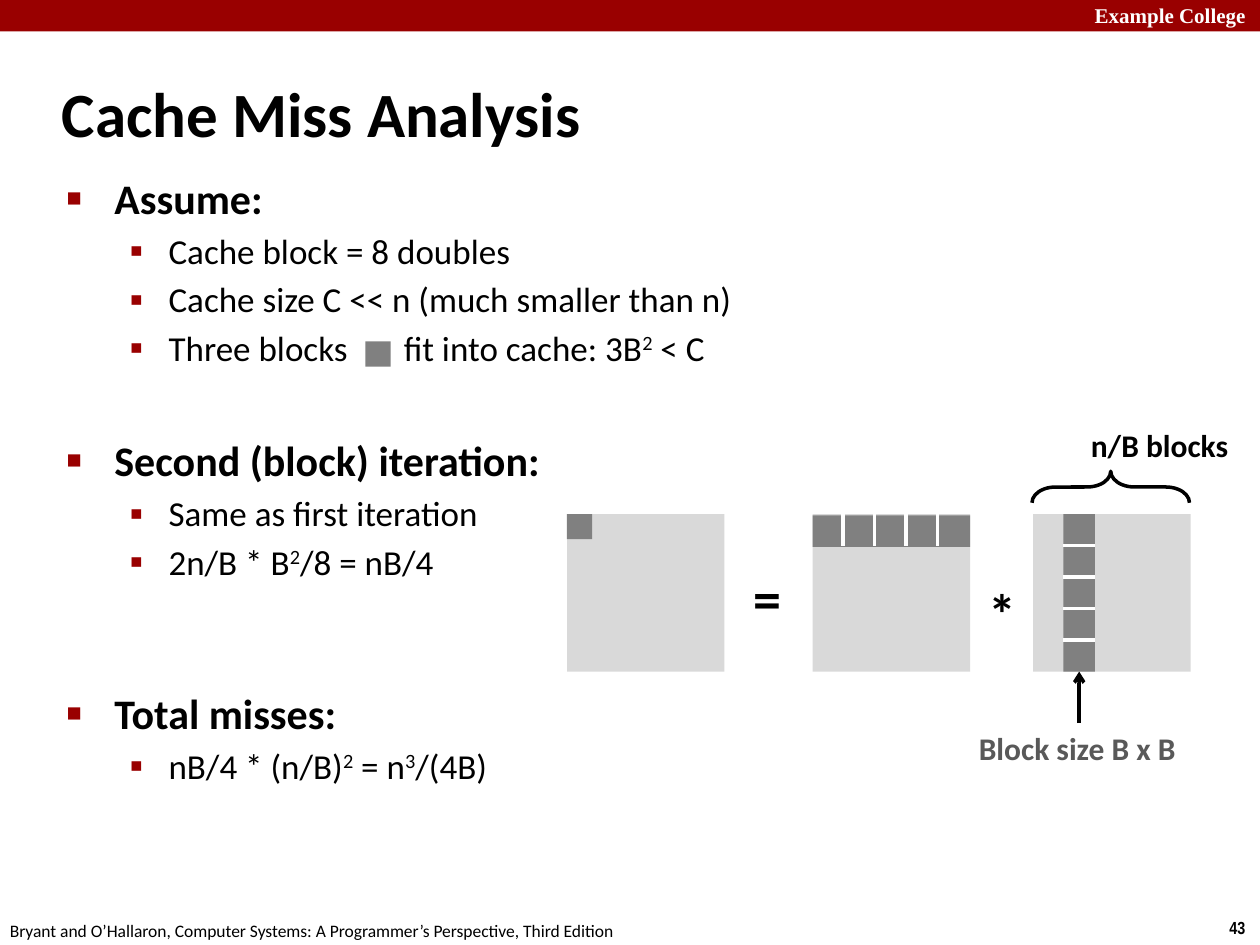
from lxml.etree import SubElement
from pptx import Presentation
from pptx.dml.color import RGBColor
from pptx.enum.shapes import MSO_CONNECTOR, MSO_SHAPE
from pptx.enum.text import MSO_ANCHOR, PP_ALIGN
from pptx.oxml.ns import qn
from pptx.util import Inches, Pt

RED = RGBColor(0x99, 0, 0)
BLACK = RGBColor(0, 0, 0)
WHITE = RGBColor(0xFF, 0xFF, 0xFF)
PALE = RGBColor(0xD9, 0xD9, 0xD9)
GRAY = RGBColor(0x80, 0x80, 0x80)
DARK = RGBColor(0x59, 0x59, 0x59)

deck = Presentation()
deck.slide_width, deck.slide_height = Inches(10), Inches(7.5)
slide = deck.slides.add_slide(deck.slide_layouts[5])
shapes = slide.shapes


def add_box(x, y, w, h, fill):
    box = shapes.add_shape(MSO_SHAPE.RECTANGLE, Inches(x), Inches(y), Inches(w), Inches(h))
    box.shadow.inherit = False
    box.fill.solid()
    box.fill.fore_color.rgb = fill
    box.line.fill.background()
    return box


def add_line(x1, y1, x2, y2, color):
    line = shapes.add_connector(
        MSO_CONNECTOR.STRAIGHT, Inches(x1), Inches(y1), Inches(x2), Inches(y2))
    line.line.color.rgb = color
    line.line.width = Pt(2)
    SubElement(line._element.spPr, qn("a:effectLst"))
    return line


# Header bar
add_box(0, 0, 10, 0.25, RED)

# Title
title = shapes.title
title.left, title.top = Inches(0.39), Inches(0.48)
title.width, title.height = Inches(8.3), Inches(0.83)
title.text_frame.text = "Cache Miss Analysis"
title.text_frame.vertical_anchor = MSO_ANCHOR.MIDDLE
para = title.text_frame.paragraphs[0]
para.alignment = PP_ALIGN.LEFT
para.font.name, para.font.size, para.font.bold = "Calibri", Pt(36), True
para.font.color.rgb = BLACK

# Bullet list: level, space before, text with ^superscripts^ and a | for the square
points = [
    (0, 4.5, "Assume:"),
    (1, 3.7, "Cache block = 8 doubles"),
    (1, 3.7, "Cache size C << n (much smaller than n)"),
    (1, 3.7, "Three blocks| |fit into cache: 3B^2^ < C"),
    (0, 38, "Second (block) iteration:"),
    (1, 3.7, "Same as first iteration"),
    (1, 3.7, "2n/B * B^2^/8 = nB/4"),
    (0, 60, "Total misses:"),
    (1, 3.7, "nB/4 * (n/B)^2^ = n^3^/(4B)"),
]
styles = [  # indent, hang, bullet, bullet size, text size
    (0.38, 0.38, "■", 60, 24),
    (0.81, 0.31, "▪", 110, 20),
]
body = shapes.add_textbox(Inches(0.43), Inches(1.32), Inches(8.64), Inches(5.84))
frame = body.text_frame
frame.word_wrap = True
for i, (level, gap, text) in enumerate(points):
    indent, hang, mark, scale, size = styles[level]
    para = frame.add_paragraph() if i else frame.paragraphs[0]
    para.level = level
    para.space_before = Pt(gap)
    props = para._p.get_or_add_pPr()
    props.set("marL", str(Inches(indent)))
    props.set("indent", str(-Inches(hang)))
    SubElement(SubElement(props, qn("a:buClr")), qn("a:srgbClr")).set("val", str(RED))
    SubElement(props, qn("a:buSzPct")).set("val", str(scale * 1000))
    SubElement(props, qn("a:buFont")).set("typeface", "Arial")
    SubElement(props, qn("a:buChar")).set("char", mark)
    para.font.name, para.font.size, para.font.bold = "Calibri", Pt(size), level == 0
    para.font.color.rgb = BLACK
    for j, part in enumerate(text.split("^")):
        for piece in part.split("|"):
            run = para.add_run()
            run.text = piece
            if j % 2:
                run._r.get_or_add_rPr().set("baseline", "30000")
            if piece == " ":  # widened to leave room for the square
                run._r.get_or_add_rPr().set("spc", "2750")
add_box(2.9, 2.71, 0.2, 0.2, GRAY)

# Matrices with their active blocks
top, side, block = 4.08, 1.25, 0.25
for left in (4.5, 6.45, 8.2):
    add_box(left, top, side, side, PALE)
add_box(4.5, top, 0.2, 0.2, GRAY)
add_box(6.45, top + 0.01, side, block, GRAY)
column = add_box(8.44, top, block, side, GRAY)
for k in range(1, 5):
    x, y = 6.44 + k * block, top + k * block
    add_line(x, top, x, top + block, WHITE)
    add_line(8.44, y, 8.69, y, WHITE)

# Arrow up to the block column
middle = 8.44 + block / 2
arrow = add_line(middle, 5.74, middle, top + side, BLACK)
arrow.end_connect(column, 2)
SubElement(arrow.line._get_or_add_ln(), qn("a:tailEnd")).set("type", "arrow")

# Brace over the last matrix
brace = shapes.add_shape(
    MSO_SHAPE.LEFT_BRACE, Inches(8.69), Inches(3.24), Inches(0.25), Inches(1.25))
brace.rotation = 90
brace.adjustments[0] = 0.75
brace.shadow.inherit = False
brace.fill.background()
brace.line.color.rgb = BLACK
brace.line.width = Pt(2)

# Labels, header and footer text
labels = [
    ("Example College", 8.59, -0.03, 1.43, 0.3, "Times New Roman", 12, True, WHITE),
    ("43", 9.66, 7.23, 0.34, 0.27, "Arial Narrow", 10, True, BLACK),
    ("Bryant and O’Hallaron, Computer Systems: A Programmer’s Perspective, Third Edition",
     -0.02, 7.25, 5.08, 0.27, "Calibri", 10, False, BLACK),
    ("=", 5.88, 4.42, 0.43, 0.64, "Calibri", 32, True, BLACK),
    ("*", 7.75, 4.54, 0.43, 0.64, "Calibri", 32, True, BLACK),
    ("Block size B x B", 7.67, 5.74, 1.78, 0.4, "Calibri", 18, True, DARK),
    ("n/B blocks", 8.56, 3.33, 1.3, 0.4, "Calibri", 18, True, BLACK),
]
for text, x, y, w, h, font, size, bold, color in labels:
    label = shapes.add_textbox(Inches(x), Inches(y), Inches(w), Inches(h))
    label.text_frame.word_wrap = False
    label.text_frame.text = text
    para = label.text_frame.paragraphs[0]
    para.font.name, para.font.size, para.font.bold = font, Pt(size), bold
    para.font.color.rgb = color

deck.save("out.pptx")
